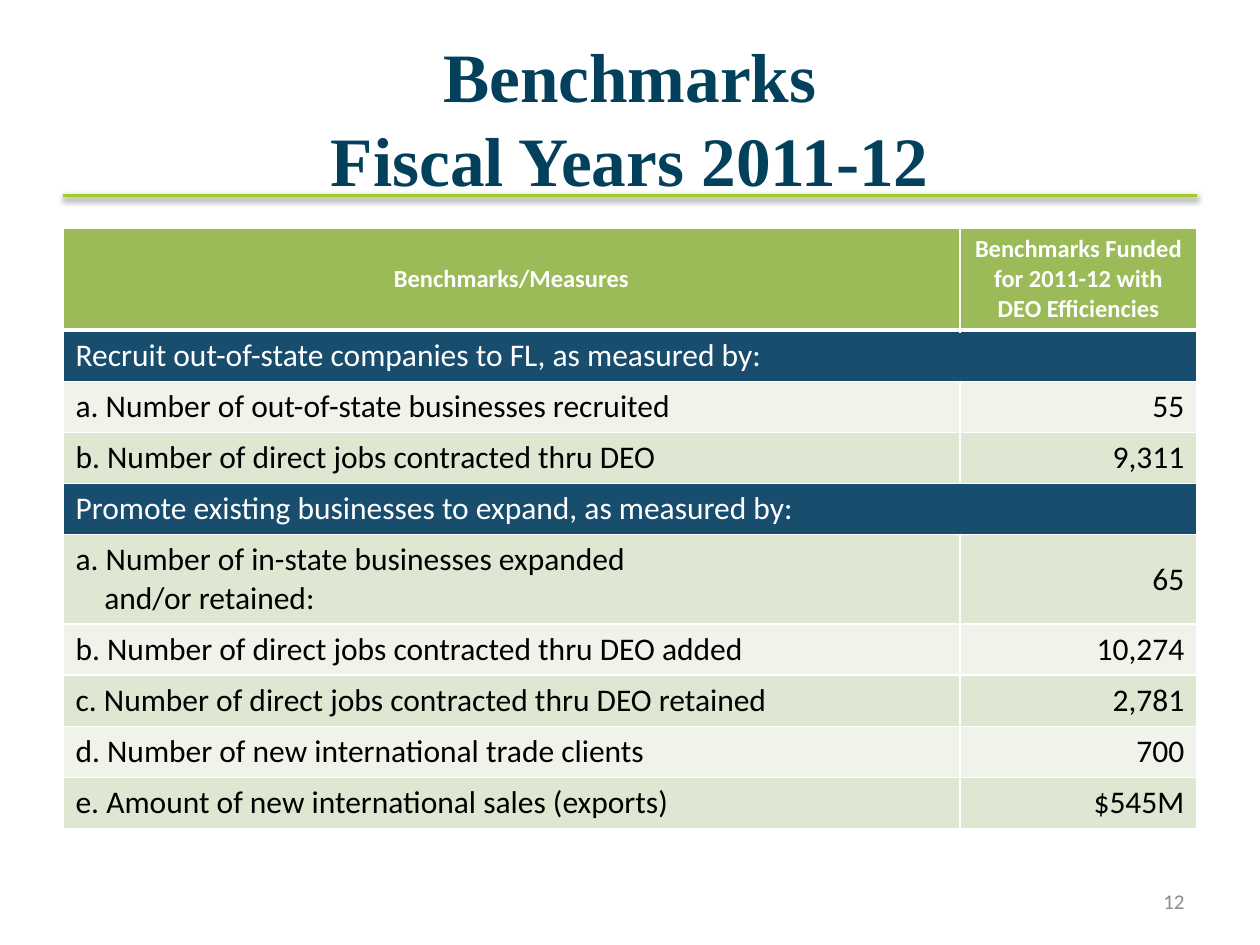
from dataclasses import dataclass

from lxml.etree import SubElement
from pptx import Presentation
from pptx.dml.color import RGBColor
from pptx.enum.shapes import MSO_CONNECTOR
from pptx.enum.text import MSO_ANCHOR, PP_ALIGN
from pptx.oxml import parse_xml
from pptx.oxml.ns import nsdecls, qn
from pptx.util import Length, Pt

WHITE = RGBColor(0xFF, 0xFF, 0xFF)
BLACK = RGBColor(0x00, 0x00, 0x00)
TITLE_NAVY = RGBColor(0x02, 0x40, 0x5C)
SECTION_NAVY = RGBColor(0x19, 0x4D, 0x6E)
RULE_GREEN = RGBColor(0xA5, 0xC9, 0x2B)
HEADER_GREEN = RGBColor(0x9B, 0xBB, 0x59)
BAND_LIGHT = RGBColor(0xEF, 0xF3, 0xEA)
BAND_DARK = RGBColor(0xDE, 0xE7, 0xD1)
PAGE_GREY = RGBColor(0x8C, 0x8C, 0x8C)

MARGIN, CONTENT_WIDTH = Pt(36), Pt(648)
COLUMN_WIDTHS = (Pt(512.6), Pt(135.4))
HEADER_HEIGHT, ROW_HEIGHT, TWO_LINE_HEIGHT = Pt(58.3), Pt(29.2), Pt(51.2)
HANGING_INDENT = Pt(16.4)


@dataclass(frozen=True)
class Measure:
    label: str
    funded: str = ""  # empty for a section heading

    @property
    def is_section(self) -> bool:
        return not self.funded

    @property
    def is_two_line(self) -> bool:
        return "\v" in self.label


@dataclass(frozen=True)
class TextStyle:
    size: float
    color: RGBColor
    align: PP_ALIGN = PP_ALIGN.LEFT
    bold: bool = False
    font: str = "Calibri"


HEADINGS = ("Benchmarks/Measures", "Benchmarks Funded for 2011-12 with DEO Efficiencies")
MEASURES = (
    Measure("Recruit out-of-state companies to FL, as measured by:"),
    Measure("a. Number of out-of-state businesses recruited", "55"),
    Measure("b. Number of direct jobs contracted thru DEO", "9,311"),
    Measure("Promote existing businesses to expand, as measured by:"),
    Measure("a. Number of in-state businesses expanded\vand/or retained:", "65"),
    Measure("b. Number of direct jobs contracted thru DEO added", "10,274"),
    Measure("c. Number of direct jobs contracted thru DEO retained", "2,781"),
    Measure("d. Number of new international trade clients", "700"),
    Measure("e. Amount of new international sales (exports)", "$545M"),
)

TITLE_STYLE = TextStyle(39.6, TITLE_NAVY, PP_ALIGN.CENTER, True, "Times New Roman")
PAGE_STYLE = TextStyle(12, PAGE_GREY, PP_ALIGN.RIGHT)
HEADER_STYLE = TextStyle(14, WHITE, PP_ALIGN.CENTER, True)
SECTION_STYLE = TextStyle(18, WHITE)
LABEL_STYLE = TextStyle(18, BLACK)
FUNDED_STYLE = TextStyle(18, BLACK, PP_ALIGN.RIGHT)


def write(text_frame, text: str, style: TextStyle):
    paragraph = text_frame.paragraphs[0]
    paragraph.text = text
    paragraph.alignment = style.align
    font = paragraph.font
    font.name, font.size, font.bold = style.font, Pt(style.size), style.bold
    font.color.rgb = style.color
    return paragraph


def add_text(slide, text: str, style: TextStyle, left: Length, top: Length,
             width: Length, height: Length):
    frame = slide.shapes.add_textbox(left, top, width, height).text_frame
    frame.word_wrap = True
    frame.vertical_anchor = MSO_ANCHOR.MIDDLE
    return frame, write(frame, text, style)


def add_title(slide) -> None:
    frame, title = add_text(slide, "Benchmarks\vFiscal Years 2011-12", TITLE_STYLE,
                            MARGIN, Pt(21.6), CONTENT_WIDTH, Pt(90))
    frame.margin_top = frame.margin_bottom = Pt(0)
    title.line_spacing = Pt(48)


def add_title_rule(slide) -> None:
    y = Pt(111.6)
    rule = slide.shapes.add_connector(MSO_CONNECTOR.STRAIGHT, MARGIN, y,
                                      MARGIN + CONTENT_WIDTH, y)
    rule.line.color.rgb = RULE_GREEN
    rule.line.width = Pt(2)
    effects = SubElement(rule._element.spPr, qn("a:effectLst"))
    effects.append(parse_xml(
        f'<a:outerShdw {nsdecls("a")} blurRad="{Pt(3.1)}" dist="{Pt(1.6)}" '
        'dir="5400000" rotWithShape="0"><a:srgbClr val="000000">'
        '<a:alpha val="38000"/></a:srgbClr></a:outerShdw>'))


def set_borders(cell, top: float = 1, bottom: float = 1) -> None:
    widths = {"lnL": 1, "lnR": 1, "lnT": top, "lnB": bottom}
    properties = cell._tc.get_or_add_tcPr()
    for position, (side, width) in enumerate(widths.items()):
        properties.insert(position, parse_xml(
            f'<a:{side} {nsdecls("a")} w="{Pt(width)}"><a:solidFill>'
            f'<a:srgbClr val="{WHITE}"/></a:solidFill></a:{side}>'))


def fill_cell(cell, text: str, style: TextStyle, fill: RGBColor,
              anchor: MSO_ANCHOR = MSO_ANCHOR.TOP):
    cell.fill.solid()
    cell.fill.fore_color.rgb = fill
    cell.vertical_anchor = anchor
    return write(cell.text_frame, text, style)


def add_measure(table, row: int, measure: Measure) -> None:
    label_cell, funded_cell = table.cell(row, 0), table.cell(row, 1)
    table.rows[row].height = TWO_LINE_HEIGHT if measure.is_two_line else ROW_HEIGHT
    for cell in (label_cell, funded_cell):
        set_borders(cell, top=3 if row == 1 else 1)
    if measure.is_section:
        label_cell.merge(funded_cell)
        fill_cell(label_cell, measure.label, SECTION_STYLE, SECTION_NAVY)
        return
    band = BAND_DARK if row % 2 else BAND_LIGHT
    label = fill_cell(label_cell, measure.label, LABEL_STYLE, band)
    if measure.is_two_line:
        properties = label._p.get_or_add_pPr()
        properties.set("marL", str(HANGING_INDENT))
        properties.set("indent", str(-HANGING_INDENT))
    anchor = MSO_ANCHOR.MIDDLE if measure.is_two_line else MSO_ANCHOR.TOP
    fill_cell(funded_cell, measure.funded, FUNDED_STYLE, band, anchor)


def add_benchmark_table(slide) -> None:
    table = slide.shapes.add_table(len(MEASURES) + 1, len(HEADINGS), MARGIN, Pt(130.4),
                                   CONTENT_WIDTH, Pt(343)).table
    for column, width in zip(table.columns, COLUMN_WIDTHS):
        column.width = width
    table.rows[0].height = HEADER_HEIGHT
    for column, heading in enumerate(HEADINGS):
        cell = table.cell(0, column)
        set_borders(cell, bottom=3)
        fill_cell(cell, heading, HEADER_STYLE, HEADER_GREEN, MSO_ANCHOR.MIDDLE)
    for row, measure in enumerate(MEASURES, start=1):
        add_measure(table, row, measure)


def main() -> None:
    presentation = Presentation()
    presentation.slide_width, presentation.slide_height = Pt(720), Pt(540)
    slide = presentation.slides.add_slide(presentation.slide_layouts[6])
    add_title_rule(slide)
    add_title(slide)
    add_text(slide, "12", PAGE_STYLE, Pt(516), Pt(500.5), Pt(168), Pt(28.8))
    add_benchmark_table(slide)
    presentation.save("out.pptx")


if __name__ == "__main__":
    main()
